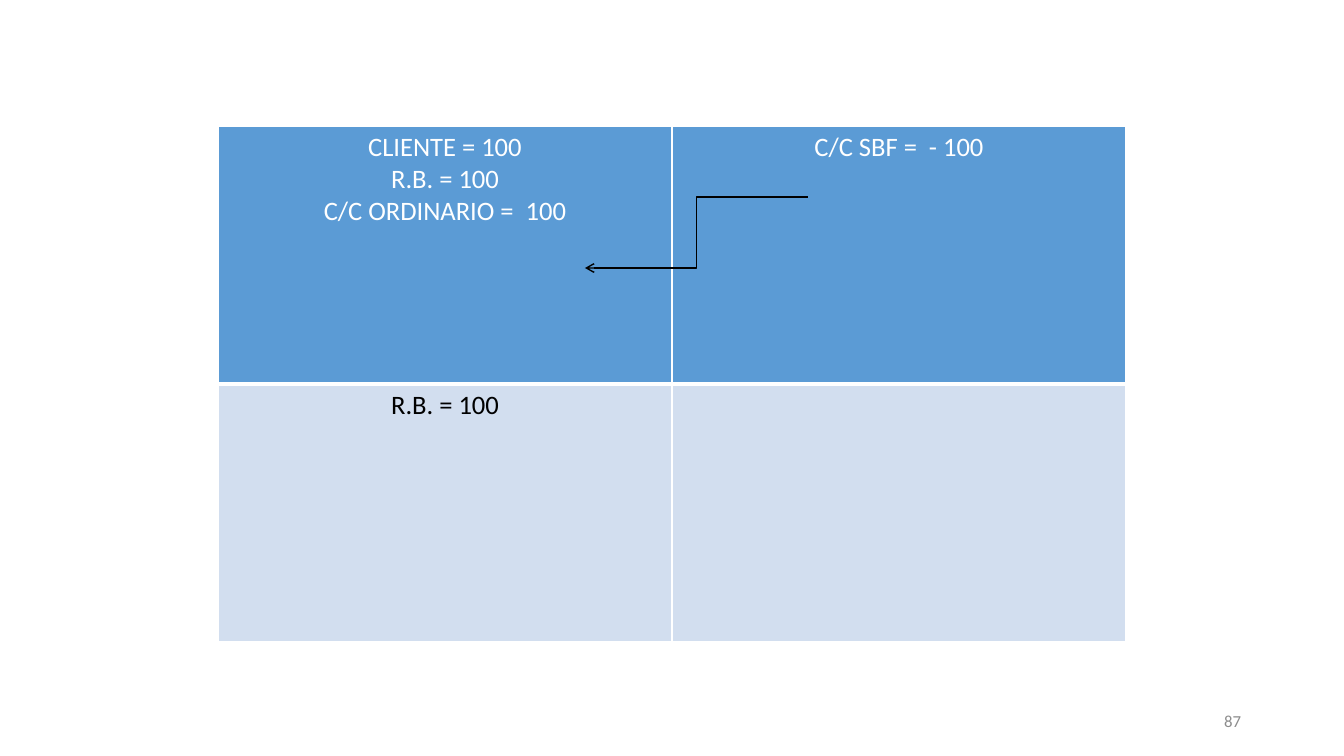
import pptx
import pptx.util
import pptx.dml.color
import pptx.enum.shapes
import pptx.enum.text
import pptx.oxml
import pptx.oxml.ns

ALIGN = pptx.enum.text.PP_ALIGN
WHITE, BLACK, GREY = "FFFFFF", "000000", "8C8C8C"
BLUE, PALE = "5B9BD5", "D2DEEF"


def px(count):
    return pptx.util.Emu(round(count * 914400 / 100.8))


def paint(code):
    return pptx.dml.color.RGBColor.from_string(code)


def node(xml):
    space = pptx.oxml.ns.nsdecls("a")
    return pptx.oxml.parse_xml(xml.replace("NS", space, 1))


class Deck:
    font = "Calibri"

    def __init__(self, width, height):
        self.file = pptx.Presentation()
        self.file.slide_width = px(width)
        self.file.slide_height = px(height)
        self.slide = self.file.slides.add_slide(self.file.slide_layouts[6])

    def fill_text(self, frame, text, size, color, align):
        frame.text = text
        for para in frame.paragraphs:
            para.alignment = align
            for run in para.runs:
                run.font.name = self.font
                run.font.size = pptx.util.Pt(size)
                run.font.color.rgb = paint(color)

    def label(self, text, left, top, width, height, size, color):
        box = self.slide.shapes.add_textbox(px(left), px(top), px(width), px(height))
        frame = box.text_frame
        frame.word_wrap = True
        frame.vertical_anchor = pptx.enum.text.MSO_ANCHOR.MIDDLE
        self.fill_text(frame, text, size, color, ALIGN.RIGHT)

    def edge(self, cell, base):
        widths = {"L": 1, "R": 1, "T": 1, "B": base}
        props = cell._tc.get_or_add_tcPr()
        for place, (side, points) in enumerate(widths.items()):
            width = pptx.util.Pt(points)
            props.insert(place, node(
                f'<a:ln{side} NS w="{width}"><a:solidFill>'
                f'<a:srgbClr val="{WHITE}"/></a:solidFill></a:ln{side}>'))

    def table(self, rows, left, top, width, height, size, looks):
        count = len(rows[0])
        grid = self.slide.shapes.add_table(
            len(rows), count, px(left), px(top),
            px(width * count), px(height * len(rows))).table
        for col in grid.columns:
            col.width = px(width)
        for row, texts, (fill, ink, base) in zip(grid.rows, rows, looks):
            row.height = px(height)
            for cell, text in zip(row.cells, texts):
                self.fill_text(cell.text_frame, text, size, ink, ALIGN.CENTER)
                cell.fill.solid()
                cell.fill.fore_color.rgb = paint(fill)
                self.edge(cell, base)

    def arrow(self, left, top, right, low, color):
        kind = pptx.enum.shapes.MSO_CONNECTOR.ELBOW
        link = self.slide.shapes.add_connector(kind, px(left), px(top), px(right), px(low))
        link.line.color.rgb = paint(color)
        link.line.width = pptx.util.Pt(1)
        link.line._get_or_add_ln().append(node('<a:tailEnd NS type="arrow"/>'))
        link._element.spPr.append(node("<a:effectLst NS/>"))


def main():
    deck = Deck(1344, 756)
    rows = [
        ["CLIENTE = 100\nR.B. = 100\nC/C ORDINARIO =  100", "C/C SBF =  - 100"],
        ["R.B. = 100", ""],
    ]
    looks = [(BLUE, WHITE, 3), (PALE, BLACK, 1)]
    deck.table(rows, 218, 126, 454, 258, 19, looks)
    deck.arrow(808, 197, 585, 268, BLACK)
    deck.label("87", 949, 701, 302, 40, 12, GREY)
    deck.file.save("out.pptx")


if __name__ == "__main__":
    main()
